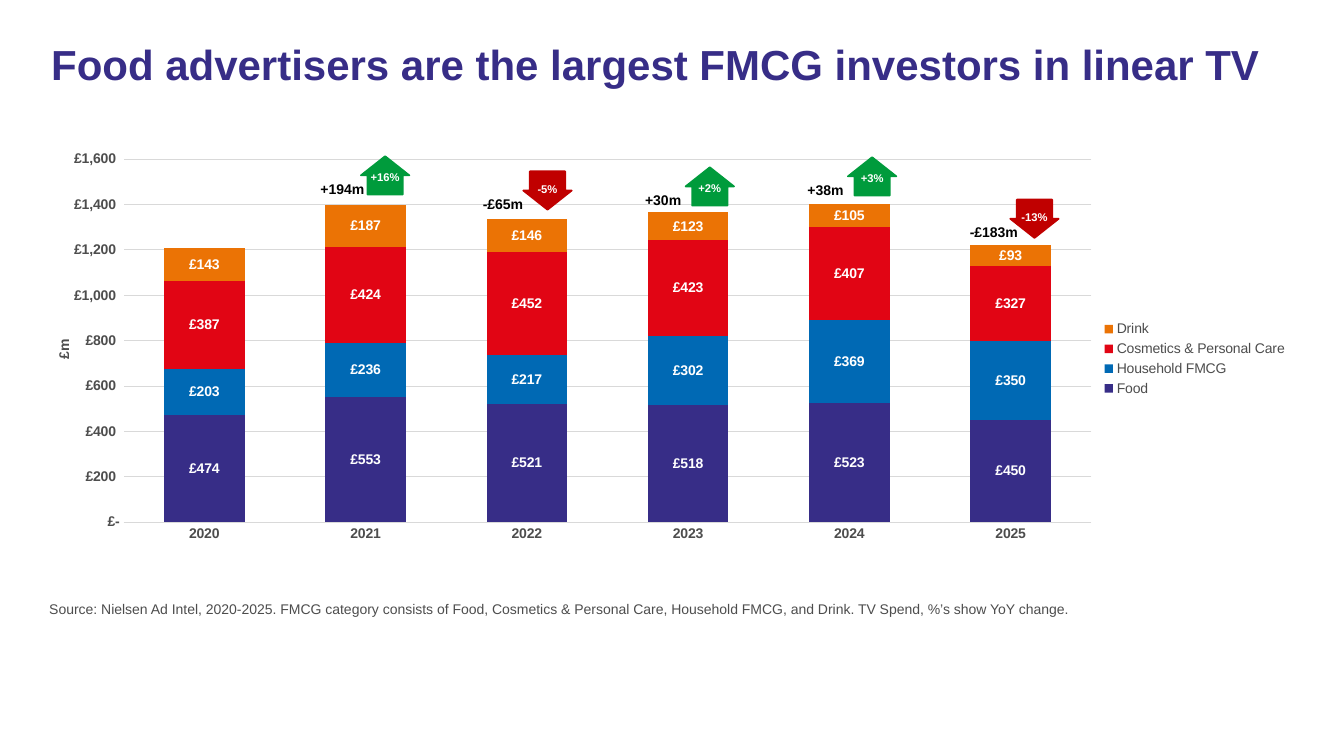
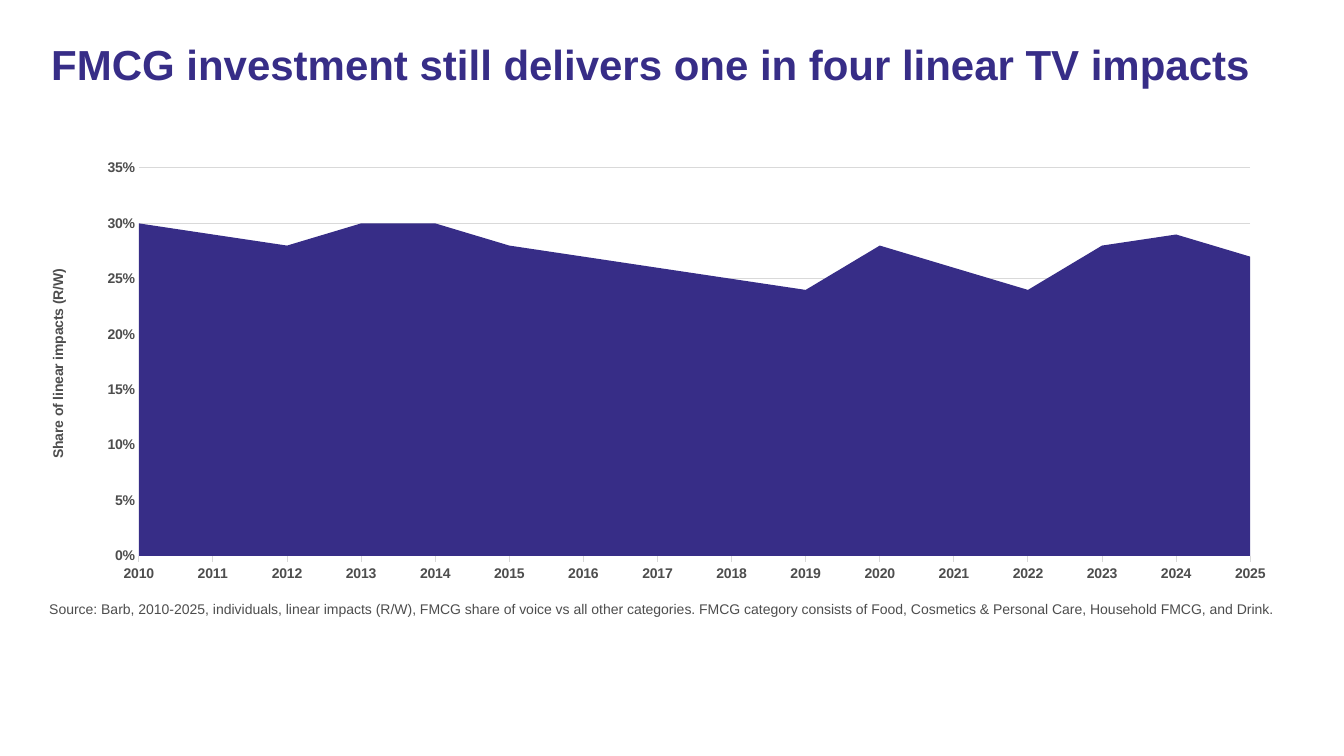
from lxml.etree import SubElement as sub
from pptx import Presentation
from pptx.chart.data import CategoryChartData as Data
from pptx.dml.color import RGBColor
from pptx.enum.chart import XL_CHART_TYPE as Kind
from pptx.enum.chart import XL_LABEL_POSITION as Spot
from pptx.enum.chart import XL_LEGEND_POSITION as Side
from pptx.enum.chart import XL_TICK_MARK as Tick
from pptx.enum.shapes import MSO_SHAPE as Shape
from pptx.enum.text import MSO_ANCHOR as Anchor
from pptx.enum.text import PP_ALIGN as Align
from pptx.oxml.ns import qn
from pptx.util import Inches, Pt

# Shared look
FONT = "Arial"
NAVY, BLUE, RED, ORANGE = "372D87", "0069B4", "E10514", "EB7305"
GREY, PALE, WHITE, BLACK = "4D4D4D", "D9D9D9", "FFFFFF", "000000"
UP, DOWN = "009B3C", "C00000"
POUNDS = '_-"£"* #,##0_-;\\-"£"* #,##0_-;_-"£"* "-"'

# Spend by year, £m
YEARS = [str(y) for y in range(2020, 2026)]
SPEND = [
    ("Food", NAVY, [474, 553, 521, 518, 523, 450]),
    ("Household FMCG", BLUE, [203, 236, 217, 302, 369, 350]),
    ("Cosmetics & Personal Care", RED, [387, 424, 452, 423, 407, 327]),
    ("Drink", ORANGE, [143, 187, 146, 123, 105, 93]),
]
# Yearly change from 2021: amount, percent, top of arrow
MOVES = [
    ("+194m", "+16%", 1.55),
    ("-£65m", "-5%", 1.7),
    ("+30m", "+2%", 1.66),
    ("+38m", "+3%", 1.56),
    ("-£183m", "-13%", 1.98),
]
# Share of impacts from 2010
SHARE = [0.3, 0.29, 0.28, 0.3, 0.3, 0.28, 0.27, 0.26,
         0.25, 0.24, 0.28, 0.26, 0.24, 0.28, 0.29, 0.27]


def color(code):
    return RGBColor.from_string(code)


def style(font, size, code, bold=True):
    font.name, font.size, font.bold = FONT, Pt(size), bold
    font.color.rgb = color(code)


def text(slide, box, words, size, code, bold=True, align=Align.LEFT):
    frame = slide.shapes.add_textbox(*map(Inches, box)).text_frame
    frame.word_wrap = True
    frame.vertical_anchor = Anchor.TOP
    para = frame.paragraphs[0]
    para.alignment = align
    run = para.add_run()
    run.text = words
    style(run.font, size, code, bold)
    return para


def page(deck, title, source):
    """Blank slide with its title and source line."""
    slide = deck.slides.add_slide(deck.slide_layouts[6])
    text(slide, (0.41, 0.39, 12.46, 1.12), title, 30, NAVY).line_spacing = 0.9
    text(slide, (0.39, 5.91, 12.4, 0.33), source, 10, GREY, False)
    return slide


def pin(node, index, **sizes):
    """Fix the place of a chart part, in fractions of the chart."""
    for old in node.findall(qn("c:layout")):
        node.remove(old)
    layout = node.makeelement(qn("c:layout"), {})
    node.insert(index, layout)
    manual = sub(layout, qn("c:manualLayout"))
    if "w" in sizes:
        sub(manual, qn("c:layoutTarget"), val="inner")
    for key in "xy":
        sub(manual, qn(f"c:{key}Mode"), val="edge")
    for key, size in sizes.items():
        sub(manual, qn(f"c:{key}"), val=str(size))


def graph(slide, box, kind, cats, rows, plot, name, spot, top, step, form):
    """Chart with the shared axes, grid and fonts."""
    data = Data()
    data.categories = cats
    for label, _, vals in rows:
        data.add_series(label, vals)
    chart = slide.shapes.add_chart(kind, *map(Inches, box), data).chart
    chart.has_title = chart.has_legend = False
    style(chart.font, 10, GREY)
    area = chart._chartSpace.chart.plotArea
    pin(area, 0, **dict(zip("xywh", plot)))
    for series, (_, code, _) in zip(chart.plots[0].series, rows):
        series.format.fill.solid()
        series.format.fill.fore_color.rgb = color(code)

    # Axes
    cat, val = chart.category_axis, chart.value_axis
    for axis in (cat, val):
        axis.major_tick_mark = axis.minor_tick_mark = Tick.NONE
        style(axis.tick_labels.font, 10, GREY)
    cat.has_major_gridlines = False
    val.has_major_gridlines = True
    val.minimum_scale, val.maximum_scale, val.major_unit = 0, top, step
    val.tick_labels.number_format = form
    val.tick_labels.number_format_is_linked = False
    val.format.line.fill.background()
    for line in (cat.format.line, val.major_gridlines.format.line):
        line.color.rgb, line.width = color(PALE), Pt(0.75)

    # Upright name of the value axis
    head = val.axis_title
    run = head.text_frame.paragraphs[0].add_run()
    run.text = name
    style(run.font, 10, GREY)
    body = head.text_frame._txBody.find(qn("a:bodyPr"))
    body.set("rot", "-5400000")
    body.set("vert", "horz")
    pin(head._element, 1, x=spot[0], y=spot[1])
    return chart


def move(slide, left, top, amount, rate):
    """Arrow with its percent, and the amount to its left."""
    falls = rate.startswith("-")
    code = DOWN if falls else UP
    text(slide, (left - 0.5, top + 0.19, 0.74, 0.27), amount, 10, BLACK)
    arrow = slide.shapes.add_shape(
        Shape.UP_ARROW, *map(Inches, (left, top, 0.48, 0.38)))
    arrow.adjustments[0], arrow.adjustments[1] = 0.73, 0.5
    arrow.rotation = 180 if falls else 0
    arrow.shadow.inherit = False
    arrow.fill.solid()
    arrow.fill.fore_color.rgb = arrow.line.color.rgb = color(code)
    arrow.line.width = Pt(1.25)
    drop = 0.06 if falls else 0.09
    text(slide, (left - 0.02, top + drop, 0.52, 0.24), rate, 8, WHITE,
         align=Align.CENTER)


def spend(deck):
    slide = page(
        deck, "Food advertisers are the largest FMCG investors in linear TV",
        "Source: Nielsen Ad Intel, 2020-2025. FMCG category consists of Food, "
        "Cosmetics & Personal Care, Household FMCG, and Drink. "
        "TV Spend, %’s show YoY change.")
    chart = graph(slide, (0.47, 1.38, 12.4, 4.36), Kind.COLUMN_STACKED, YEARS,
                  SPEND, (0.061, 0.046, 0.774, 0.826), "£m", (0.004, 0.45),
                  1600, 200, POUNDS)
    plot = chart.plots[0]
    plot.gap_width = plot.overlap = 100
    plot.vary_by_categories = False
    for series in plot.series:
        tags = series.data_labels
        tags.show_value, tags.position = True, Spot.CENTER
        tags.number_format, tags.number_format_is_linked = POUNDS, False
        style(tags.font, 10, WHITE)
    chart.has_legend = True
    chart.legend.position = Side.RIGHT
    chart.legend.include_in_layout = False
    style(chart.legend.font, 10, GREY, False)
    for i, (amount, rate, top) in enumerate(MOVES):
        move(slide, 3.58 + 1.61 * i, top, amount, rate)


def share(deck):
    slide = page(
        deck, "FMCG investment still delivers one in four linear TV impacts",
        "Source: Barb, 2010-2025, individuals, linear impacts (R/W), FMCG "
        "share of voice vs all other categories. FMCG category consists of "
        "Food, Cosmetics & Personal Care, Household FMCG, and Drink.")
    cats = [str(y) for y in range(2010, 2026)]
    chart = graph(slide, (0.41, 1.51, 12.4, 4.36), Kind.AREA, cats,
                  [("Series 1", NAVY, SHARE)], (0.078, 0.036, 0.889, 0.883),
                  "Share of linear impacts (R/W)", (0.004, 0.26),
                  0.35, 0.05, "0%")
    chart.plots[0].vary_by_categories = False
    chart.category_axis.major_tick_mark = Tick.OUTSIDE
    cross = chart.value_axis._element.find(qn("c:crossBetween"))
    cross.set("val", "midCat")


def main():
    deck = Presentation()
    deck.slide_width, deck.slide_height = Inches(13.33), Inches(7.5)
    spend(deck)
    share(deck)
    deck.save("out.pptx")


if __name__ == "__main__":
    main()
